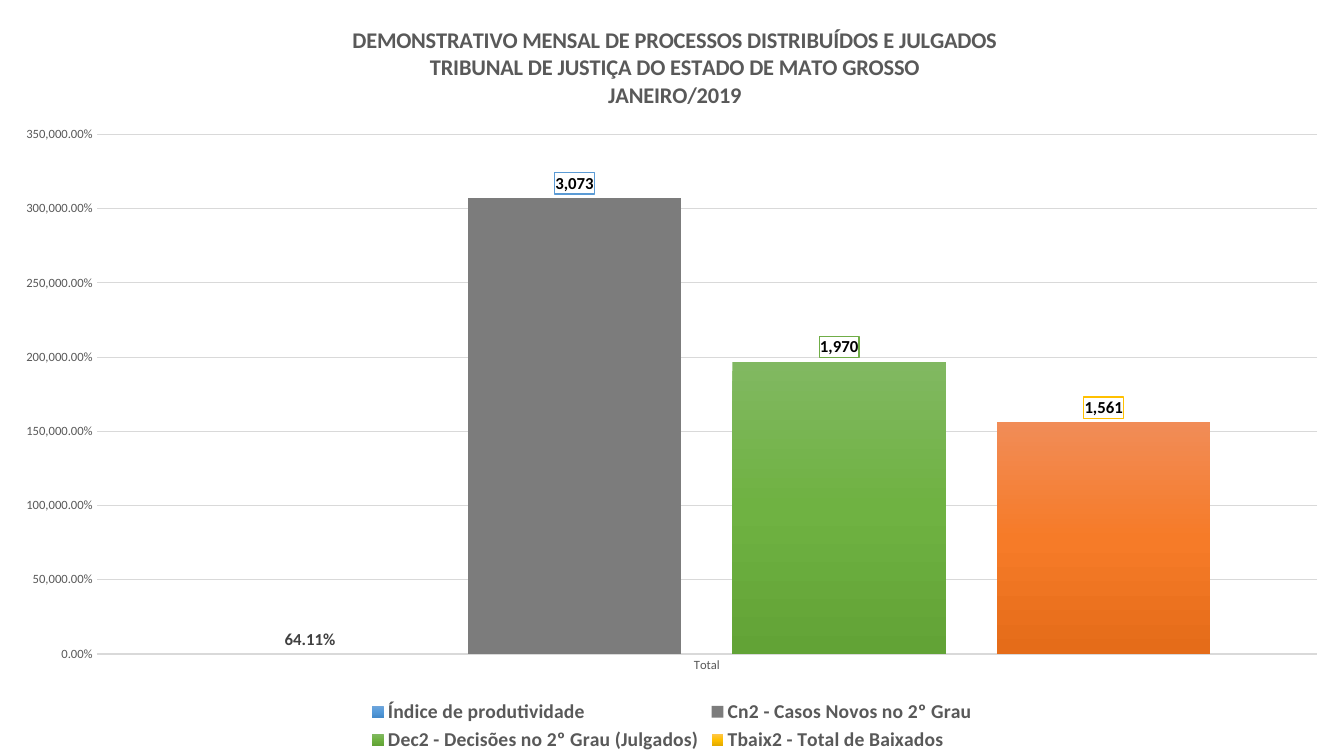
"""Build a slide with a column chart of cases filed and judged."""
from copy import deepcopy
from dataclasses import dataclass

from pptx import Presentation
from pptx.chart.data import CategoryChartData
from pptx.dml.color import RGBColor
from pptx.enum.chart import XL_CHART_TYPE, XL_LABEL_POSITION, XL_LEGEND_POSITION, XL_TICK_MARK
from pptx.oxml import parse_xml
from pptx.oxml.ns import nsdecls, qn
from pptx.util import Pt

COLUMN = XL_CHART_TYPE.COLUMN_CLUSTERED
BOTTOM = XL_LEGEND_POSITION.BOTTOM
OUTSIDE = XL_LABEL_POSITION.OUTSIDE_END
NO_TICK = XL_TICK_MARK.NONE

WIDTH, HEIGHT = Pt(960), Pt(540)
FACE = "Calibri"
COLORS = {
    "text": "595959", "dark": "404040", "black": "000000", "white": "FFFFFF",
    "grid": "D9D9D9", "blue": "5B9BD5", "green": "70AD47", "gold": "FFC000",
}
TITLE = (
    "DEMONSTRATIVO MENSAL DE PROCESSOS DISTRIBUÍDOS E JULGADOS",
    "TRIBUNAL DE JUSTIÇA DO ESTADO DE MATO GROSSO",
    "JANEIRO/2019",
)
SCALE = {
    "minimum_scale": 0, "maximum_scale": 3500, "major_unit": 500,
    "has_major_gridlines": True,
}
PLOT_BOX = {"x": 0.072, "y": 0.178, "w": 0.908, "h": 0.687}
TITLE_BOX = {"x": 0.26, "y": 0.03}


@dataclass
class Bar:
    name: str
    value: float
    fill: tuple[str, ...]
    form: str = "#,##0"
    ink: str = "black"
    edge: str = ""
    point: tuple[str, ...] = ()


BARS = (
    Bar("Índice de produtividade", 0.6411, ("71A6DB", "559BDB", "448ACA"),
        form="0.00%", ink="dark"),
    Bar("Cn2 - Casos Novos no 2º Grau", 3073, ("7C7C7C",), edge="blue"),
    Bar("Dec2 - Decisões no 2º Grau (Julgados)", 1970,
        ("81B861", "6FB242", "62A336"), edge="green"),
    Bar("Tbaix2 - Total de Baixados", 1561, ("FFC64B", "FFC000", "E3AB00"),
        edge="gold", point=("F18C57", "F67B28", "E56C19")),
)


def apply(target, values: dict) -> None:
    for key, value in values.items():
        setattr(target, key, value)


def style(font, size: int, color: str, bold: bool = False) -> None:
    apply(font, {"name": FACE, "size": Pt(size), "bold": bold})
    font.color.rgb = RGBColor.from_string(COLORS[color])


def rule(line, color: str, width: float) -> None:
    line.color.rgb = RGBColor.from_string(COLORS[color])
    line.width = Pt(width)


def paint(fill, shades: tuple[str, ...], series, part: str) -> None:
    if len(shades) == 1:
        fill.solid()
        fill.fore_color.rgb = RGBColor.from_string(shades[0])
        return
    fill.gradient()
    fill.gradient_angle = 270
    stops = series._element.xpath(f"{part}//a:gsLst")[0]
    stops.insert(1, deepcopy(stops[0]))
    for step, (stop, shade) in enumerate(zip(fill.gradient_stops, shades)):
        stop.position = step / 2
        stop.color.rgb = RGBColor.from_string(shade)


def place(node, spot: int, box: dict[str, float], inner: bool = False) -> None:
    for old in node.findall(qn("c:layout")):
        node.remove(old)
    target = '<c:layoutTarget val="inner"/>' if inner else ""
    modes = "".join(f'<c:{key}Mode val="edge"/>' for key in "xy")
    sizes = "".join(f'<c:{key} val="{value}"/>' for key, value in box.items())
    node.insert(spot, parse_xml(
        f'<c:layout {nsdecls("c")}><c:manualLayout>{target}{modes}{sizes}'
        "</c:manualLayout></c:layout>"))


def label(series, bar: Bar) -> None:
    labels = series.data_labels
    apply(labels, {
        "show_value": True, "number_format": bar.form,
        "number_format_is_linked": False, "position": OUTSIDE,
    })
    style(labels.font, 12, bar.ink, True)
    if bar.edge:
        frame = parse_xml(
            f'<c:spPr {nsdecls("c", "a")}>'
            f'<a:solidFill><a:srgbClr val="{COLORS["white"]}"/></a:solidFill>'
            f'<a:ln w="{Pt(1)}"><a:solidFill><a:srgbClr val="{COLORS[bar.edge]}"/>'
            "</a:solidFill></a:ln></c:spPr>")
        labels._element.find(qn("c:txPr")).addprevious(frame)


def draw_bar(series, bar: Bar) -> None:
    paint(series.format.fill, bar.fill, series, "c:spPr")
    if bar.point:
        paint(series.points[0].format.fill, bar.point, series, "c:dPt")
    label(series, bar)


def draw_title(chart) -> None:
    chart.has_title = True
    frame = chart.chart_title.text_frame
    frame.text = "\n".join(TITLE)
    for line in frame.paragraphs:
        style(line.font, 16, "text", True)
        for run in line.runs:
            style(run.font, 16, "text", True)
    place(chart.chart_title._element, 1, TITLE_BOX)


def draw_axes(chart) -> None:
    for axis in (chart.category_axis, chart.value_axis):
        apply(axis, {"major_tick_mark": NO_TICK, "minor_tick_mark": NO_TICK})
        style(axis.tick_labels.font, 9, "text")
    rule(chart.category_axis.format.line, "grid", 1)
    axis = chart.value_axis
    apply(axis, SCALE)
    apply(axis.tick_labels, {
        "number_format": "#,##0.00%", "number_format_is_linked": False,
    })
    axis.format.line.fill.background()
    rule(axis.major_gridlines.format.line, "grid", 0.75)


def main() -> None:
    deck = Presentation()
    apply(deck, {"slide_width": WIDTH, "slide_height": HEIGHT})
    slide = deck.slides.add_slide(deck.slide_layouts[6])
    data = CategoryChartData()
    data.categories = ["Total"]
    for bar in BARS:
        data.add_series(bar.name, [bar.value])
    chart = slide.shapes.add_chart(COLUMN, Pt(0), Pt(0), WIDTH, HEIGHT, data).chart
    style(chart.font, 10, "black")
    draw_title(chart)
    draw_axes(chart)
    chart.has_legend = True
    apply(chart.legend, {"position": BOTTOM, "include_in_layout": False})
    style(chart.legend.font, 14, "text", True)
    plot = chart.plots[0]
    apply(plot, {"gap_width": 100, "overlap": -24, "vary_by_categories": False})
    for series, bar in zip(plot.series, BARS):
        draw_bar(series, bar)
    place(chart._chartSpace.chart.plotArea, 0, PLOT_BOX, True)
    deck.save("out.pptx")


if __name__ == "__main__":
    main()
